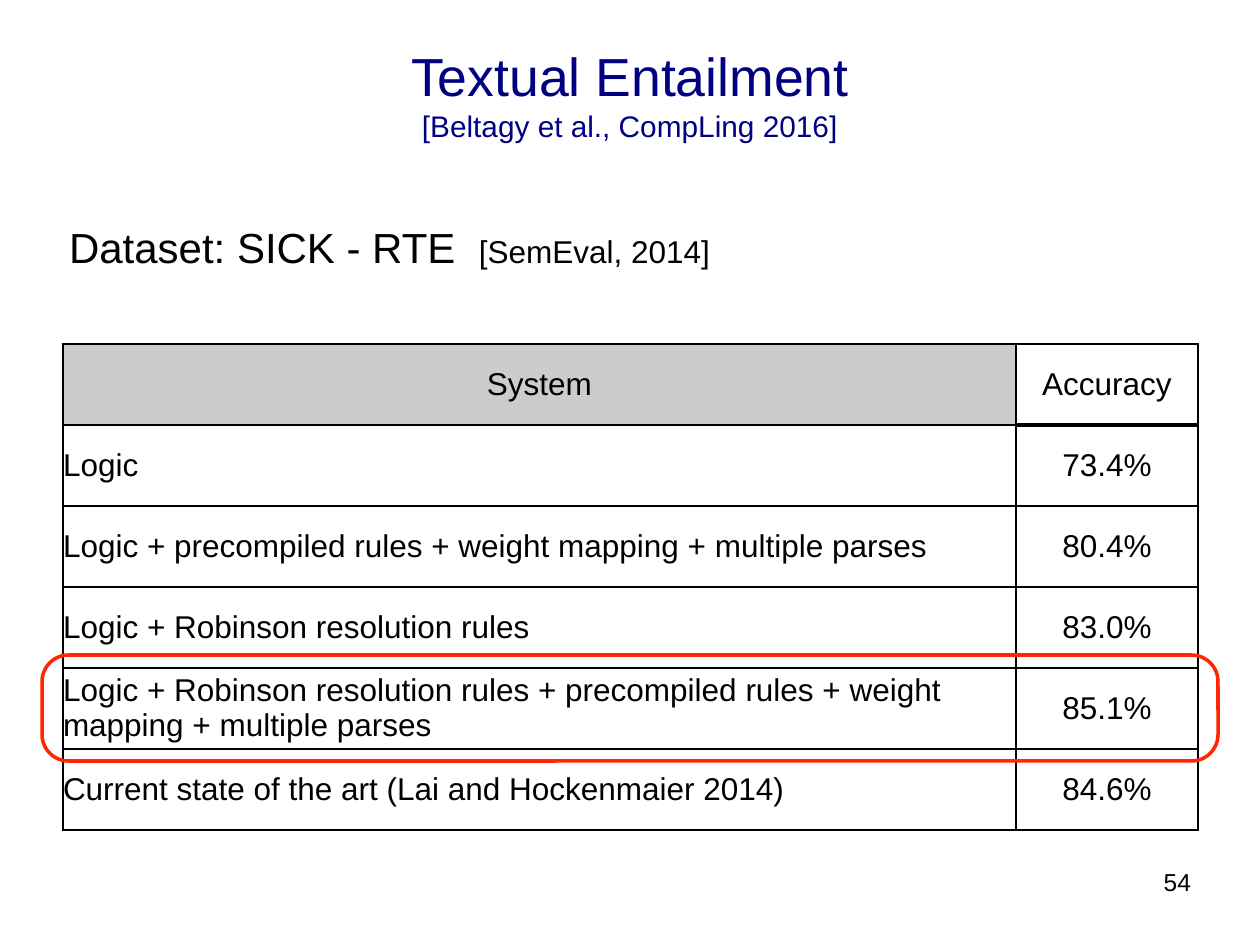
from dataclasses import dataclass
from typing import NamedTuple

from lxml import etree
from pptx import Presentation
from pptx import util as u
from pptx.dml.color import RGBColor
from pptx.enum import shapes, text
from pptx.oxml import ns

SCALE = 914400 / 126  # EMU in one px


@dataclass(frozen=True)
class Theme:
    font: str = "Arial"
    navy: str = "000080"
    black: str = "000000"
    white: str = "FFFFFF"
    gray: str = "CCCCCC"
    red: str = "FF2600"
    title: float = 30.6
    cite: float = 17
    lead: float = 24
    cell: float = 18
    page: float = 14


class Box(NamedTuple):
    x: int
    y: int
    w: int
    h: int


class Row(NamedTuple):
    system: str
    score: str


T = Theme()
HEAD = Row("System", "Accuracy")
ROWS = [
    Row("Logic", "73.4%"),
    Row("Logic + precompiled rules + weight mapping + multiple parses", "80.4%"),
    Row("Logic + Robinson resolution rules", "83.0%"),
    Row("Logic + Robinson resolution rules + precompiled rules"
        " + weight mapping + multiple parses", "85.1%"),
    Row("Current state of the art (Lai and Hockenmaier 2014)", "84.6%"),
]
COLS = (953, 182)
ROW_H = 81
LEFT, MID, RIGHT = text.PP_ALIGN.LEFT, text.PP_ALIGN.CENTER, text.PP_ALIGN.RIGHT


def px(n: int) -> u.Emu:
    return u.Emu(round(n * SCALE))


def rgb(code: str) -> RGBColor:
    return RGBColor.from_string(code)


def place(shape, box: Box) -> None:
    shape.left, shape.top, shape.width, shape.height = map(px, box)


def setup(frame, anchor, wrap: bool = True) -> None:
    """Give a text frame its insets, anchor and wrapping."""
    frame.margin_left = frame.margin_right = px(6)
    frame.margin_top = frame.margin_bottom = px(6)
    frame.auto_size = text.MSO_AUTO_SIZE.NONE
    frame.vertical_anchor = anchor
    frame.word_wrap = wrap


def add_run(para, words: str, size: float, color: str = T.black) -> None:
    run = para.add_run()
    run.text = words
    run.font.name = T.font
    run.font.size = u.Pt(size)
    run.font.color.rgb = rgb(color)


def add_title(slide) -> None:
    title = slide.shapes.title
    place(title, Box(63, 38, 1134, 110))
    frame = title.text_frame
    setup(frame, text.MSO_ANCHOR.MIDDLE)
    lines = [("Textual Entailment", T.title),
             ("[Beltagy et al., CompLing 2016]", T.cite)]
    for i, (words, size) in enumerate(lines):
        para = frame.add_paragraph() if i else frame.paragraphs[0]
        para.alignment = MID
        add_run(para, words, size, T.navy)


def add_lead(slide) -> None:
    body = slide.placeholders[1]
    place(body, Box(63, 168, 1134, 157))
    setup(body.text_frame, text.MSO_ANCHOR.MIDDLE)
    para = body.text_frame.paragraphs[0]
    para.space_before = u.Pt(5)
    props = para._p.get_or_add_pPr()
    props.set("marL", "0")
    props.set("indent", "0")
    etree.SubElement(props, ns.qn("a:buNone"))
    add_run(para, "Dataset: SICK - RTE  ", T.lead)
    add_run(para, "[SemEval, 2014]", T.cell)


def add_edge(cell, side: str, width: float) -> None:
    line = etree.SubElement(cell._tc.get_or_add_tcPr(), ns.qn(f"a:ln{side}"),
                            w=str(u.Pt(width)))
    fill = etree.SubElement(line, ns.qn("a:solidFill"))
    etree.SubElement(fill, ns.qn("a:srgbClr"), val=T.black)


def fill_cell(cell, words: str, align, fill: str, top: float, base: float) -> None:
    cell.margin_left = cell.margin_right = 0
    cell.margin_top = cell.margin_bottom = 0
    cell.vertical_anchor = text.MSO_ANCHOR.MIDDLE
    for side, width in zip("LRTB", (1, 1, top, base)):
        add_edge(cell, side, width)
    cell.fill.solid()
    cell.fill.fore_color.rgb = rgb(fill)
    para = cell.text_frame.paragraphs[0]
    para.alignment = align
    add_run(para, words, T.cell)


def add_scores(slide) -> None:
    rows = [HEAD, *ROWS]
    box = Box(63, 344, sum(COLS), ROW_H * len(rows))
    table = slide.shapes.add_table(len(rows), len(COLS), *map(px, box)).table
    table.first_row = table.horz_banding = False
    for col, width in zip(table.columns, COLS):
        col.width = px(width)
    for i, row in enumerate(rows):
        table.rows[i].height = px(ROW_H)
        for j, words in enumerate(row):
            fill_cell(table.cell(i, j), words,
                      LEFT if i and not j else MID,
                      T.white if i or j else T.gray,
                      top=2 if i == 1 and j else 1,
                      base=2 if i == 0 and j else 1)


def add_ring(slide) -> None:
    """Outline the best system."""
    box = Box(42, 655, 1176, 106)
    ring = slide.shapes.add_shape(shapes.MSO_SHAPE.ROUNDED_RECTANGLE, *map(px, box))
    ring.adjustments[0] = 0.25
    ring.shadow.inherit = False
    ring.fill.background()
    ring.line.color.rgb = rgb(T.red)
    ring.line.width = u.Pt(2)


def add_page(slide) -> None:
    page = slide.shapes.add_textbox(*map(px, Box(1155, 861, 42, 40)))
    setup(page.text_frame, text.MSO_ANCHOR.TOP, wrap=False)
    para = page.text_frame.paragraphs[0]
    para.alignment = RIGHT
    add_run(para, "54", T.page)


def main() -> None:
    deck = Presentation()
    deck.slide_width, deck.slide_height = px(1260), px(945)
    slide = deck.slides.add_slide(deck.slide_layouts[1])
    for draw in (add_title, add_page, add_lead, add_scores, add_ring):
        draw(slide)
    deck.save("out.pptx")


if __name__ == "__main__":
    main()
